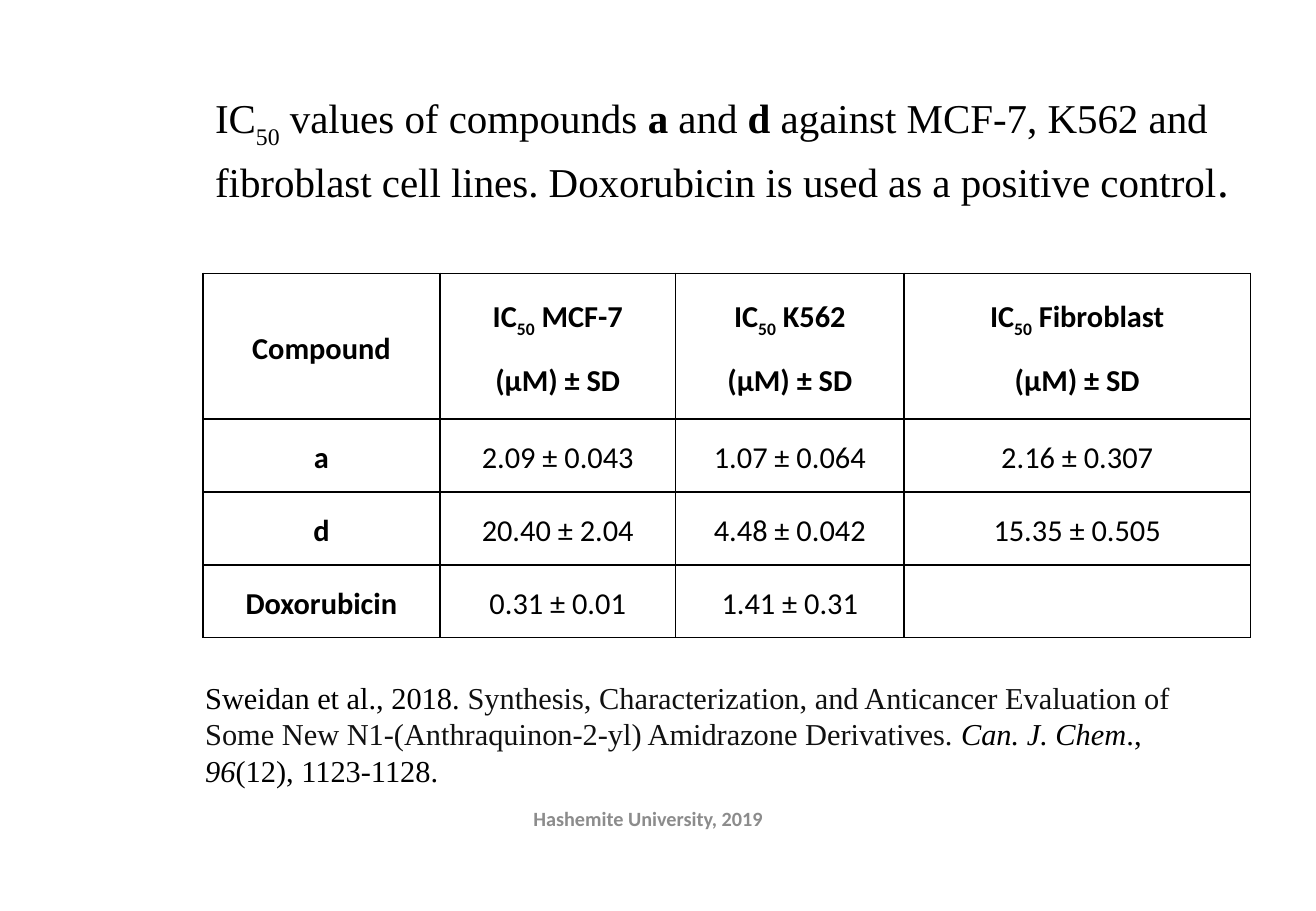
from lxml import etree
from pptx import Presentation
from pptx.dml.color import RGBColor
from pptx.enum.text import MSO_ANCHOR as Anchor, MSO_AUTO_SIZE as AutoSize, PP_ALIGN as Align
from pptx.oxml.ns import qn
from pptx.util import Inches, Pt

BLACK = RGBColor(0x00, 0x00, 0x00)
DARK_GRAY = RGBColor(0x11, 0x11, 0x11)
GRAY = RGBColor(0x8C, 0x8C, 0x8C)
SERIF, SANS = "Times New Roman", "Calibri"

COLUMN_WIDTHS = [1.95, 1.94, 1.88, 2.85]
ROW_HEIGHTS = [1.2, 0.6, 0.6, 0.6]
CELL_LINES = ["MCF-7", "K562", "Fibroblast"]
RESULTS = [
    ["a", "2.09 ± 0.043", "1.07 ± 0.064", "2.16 ± 0.307"],
    ["d", "20.40 ± 2.04", "4.48 ± 0.042", "15.35 ± 0.505"],
    ["Doxorubicin", "0.31 ± 0.01", "1.41 ± 0.31", ""],
]


def add_run(paragraph, text, name, size, color=BLACK, bold=False, italic=False, baseline=0):
    """Add one formatted run; baseline is a percentage, negative for subscripts."""
    run = paragraph.add_run()
    run.text = text
    font = run.font
    font.name, font.size = name, Pt(size)
    font.bold, font.italic = bold, italic
    font.color.rgb = color
    if baseline:
        run._r.get_or_add_rPr().set("baseline", str(baseline * 1000))


def add_text_box(slide, left, top, width, height):
    box = slide.shapes.add_textbox(Inches(left), Inches(top), Inches(width), Inches(height))
    box.text_frame.word_wrap = True
    return box.text_frame


def place_title(slide, left, top, width, height):
    title = slide.shapes.title
    title.left, title.top = Inches(left), Inches(top)
    title.width, title.height = Inches(width), Inches(height)
    frame = title.text_frame
    frame.word_wrap = True
    frame.auto_size = AutoSize.NONE
    frame.vertical_anchor = Anchor.TOP
    frame.margin_top = Inches(0.36)
    paragraph = frame.paragraphs[0]
    paragraph.alignment = Align.LEFT
    size = 24.3
    add_run(paragraph, "IC", SERIF, size)
    add_run(paragraph, "50", SERIF, size, baseline=-30)
    add_run(paragraph, " values of compounds ", SERIF, size)
    add_run(paragraph, "a ", SERIF, size, bold=True)
    add_run(paragraph, "and", SERIF, size)
    add_run(paragraph, " d", SERIF, size, bold=True)
    add_run(paragraph, " against MCF-7, K562 and fibroblast cell lines. "
            "Doxorubicin is used as a positive control", SERIF, size)
    add_run(paragraph, ".", SERIF, 27.9)


def draw_borders(cell):
    properties = cell._tc.get_or_add_tcPr()
    for position, side in enumerate(("lnL", "lnR", "lnT", "lnB")):
        line = etree.Element(qn(f"a:{side}"), w=str(Pt(1)))
        fill = etree.SubElement(line, qn("a:solidFill"))
        etree.SubElement(fill, qn("a:srgbClr"), val=str(BLACK))
        properties.insert(position, line)


def fill_cell(cell, lines, bold):
    """Write lines of (text, baseline) pieces into a bordered, centred cell."""
    cell.fill.background()
    draw_borders(cell)
    cell.vertical_anchor = Anchor.MIDDLE
    cell.margin_left = cell.margin_right = Inches(0.07)
    cell.margin_top = cell.margin_bottom = 0
    frame = cell.text_frame
    for index, pieces in enumerate(lines):
        paragraph = frame.add_paragraph() if index else frame.paragraphs[0]
        paragraph.alignment = Align.CENTER
        paragraph.line_spacing = 1.15
        paragraph.space_after = Pt(10)
        for text, baseline in pieces:
            add_run(paragraph, text, SANS, 18, bold=bold, baseline=baseline)


def add_results_table(slide, left, top):
    frame = slide.shapes.add_table(
        len(ROW_HEIGHTS), len(COLUMN_WIDTHS), Inches(left), Inches(top),
        Inches(sum(COLUMN_WIDTHS)), Inches(sum(ROW_HEIGHTS)))
    table = frame.table
    table.first_row = table.horz_banding = False
    for column, width in zip(table.columns, COLUMN_WIDTHS):
        column.width = Inches(width)
    for row, height in zip(table.rows, ROW_HEIGHTS):
        row.height = Inches(height)

    fill_cell(table.cell(0, 0), [[("Compound", 0)]], True)
    for column, cell_line in enumerate(CELL_LINES, 1):
        heading = [("IC", 0), ("50", -25), (f" {cell_line}", 0)]
        fill_cell(table.cell(0, column), [heading, [("(µM) ± SD", 0)]], True)
    for row, values in enumerate(RESULTS, 1):
        for column, value in enumerate(values):
            lines = [[(value, 0)]] if value else []
            fill_cell(table.cell(row, column), lines, column == 0)


def add_citation(slide, left, top, width, height):
    paragraph = add_text_box(slide, left, top, width, height).paragraphs[0]
    add_run(paragraph, "Sweidan et al., 2018. ", SERIF, 18)
    add_run(paragraph, "Synthesis, Characterization, and Anticancer Evaluation of Some New "
            "N1-(Anthraquinon-2-yl) Amidrazone Derivatives. ", SERIF, 18, DARK_GRAY)
    add_run(paragraph, "Can. J. Chem", SERIF, 18, italic=True)
    add_run(paragraph, "., ", SERIF, 18)
    add_run(paragraph, "96", SERIF, 18, italic=True)
    add_run(paragraph, "(12), 1123-1128.", SERIF, 18)


def add_footer(slide, left, top, width, height):
    frame = add_text_box(slide, left, top, width, height)
    frame.vertical_anchor = Anchor.MIDDLE
    paragraph = frame.paragraphs[0]
    paragraph.alignment = Align.CENTER
    add_run(paragraph, "Hashemite University, 2019", SANS, 12, GRAY, bold=True)


def main():
    presentation = Presentation()
    presentation.slide_width, presentation.slide_height = Inches(10.83), Inches(7.5)
    slide = presentation.slides.add_slide(presentation.slide_layouts[5])
    place_title(slide, 1.67, 0.4, 8.61, 2.96)
    add_results_table(slide, 1.67, 2.25)
    add_citation(slide, 1.59, 5.54, 8.65, 1.31)
    add_footer(slide, 4.05, 6.54, 2.57, 0.4)
    presentation.save("out.pptx")


if __name__ == "__main__":
    main()
